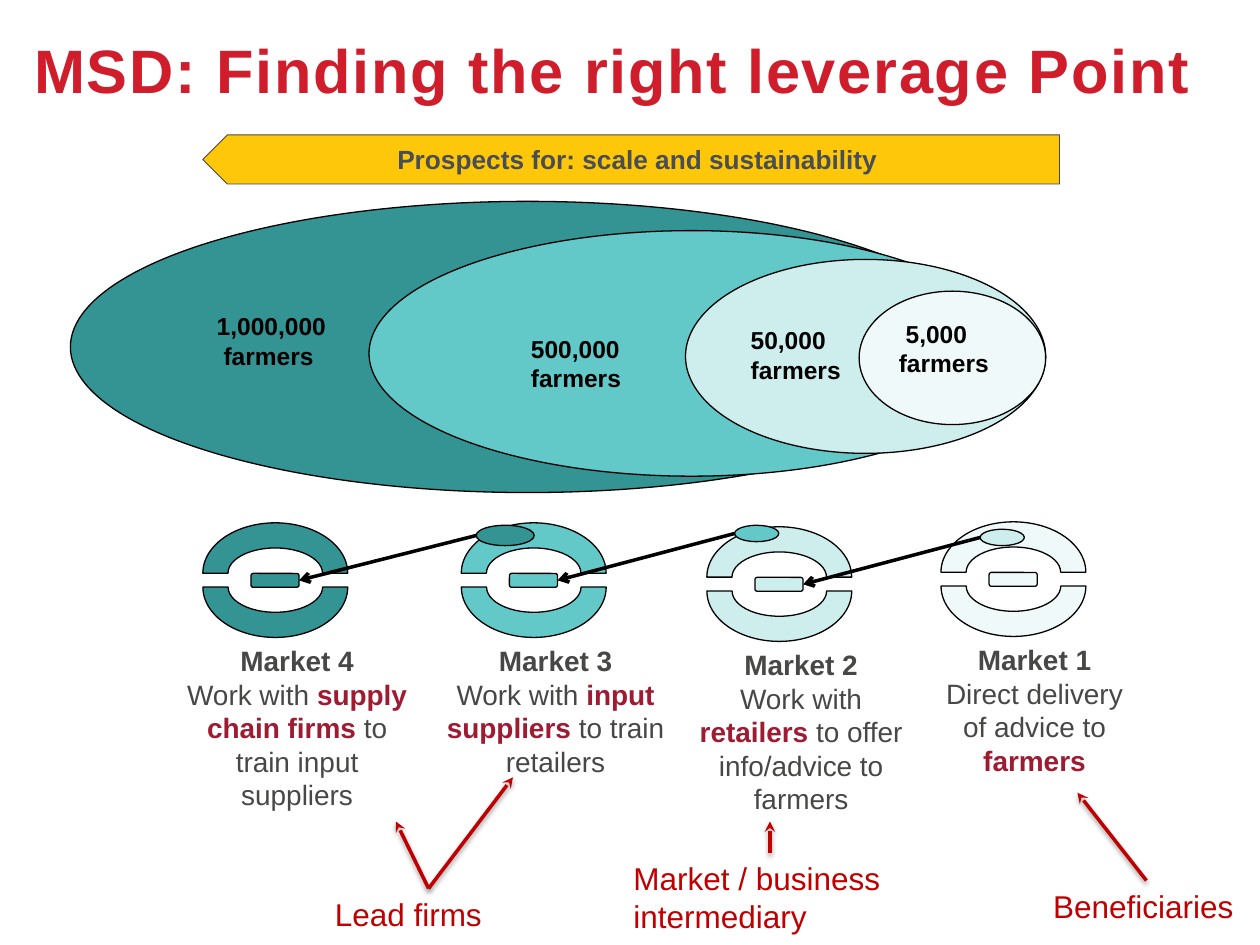
from lxml.etree import SubElement
from pptx import Presentation
from pptx.dml.color import RGBColor
from pptx.enum.shapes import MSO_CONNECTOR, MSO_SHAPE
from pptx.enum.text import MSO_ANCHOR, PP_ALIGN
from pptx.oxml import parse_xml
from pptx.oxml.ns import nsdecls, qn
from pptx.util import Cm, Pt

BLACK = RGBColor(0x00, 0x00, 0x00)
TEAL = RGBColor(0x34, 0x93, 0x93)
AQUA = RGBColor(0x63, 0xC8, 0xC8)
PALE = RGBColor(0xCE, 0xEE, 0xEE)
ICE = RGBColor(0xEF, 0xF9, 0xF9)
YELLOW = RGBColor(0xFE, 0xC7, 0x09)
BANNER_LINE = RGBColor(0x47, 0x47, 0x47)
BANNER_TEXT = RGBColor(0x49, 0x4E, 0x55)
GREY = RGBColor(0x47, 0x47, 0x46)
WINE = RGBColor(0x9E, 0x1B, 0x32)
TITLE_RED = RGBColor(0xD0, 0x1D, 0x2B)
CALLOUT_RED = RGBColor(0xC0, 0x00, 0x00)

SOFT_SHADOW = (
    f'<a:effectLst {nsdecls("a")}>'
    '<a:outerShdw blurRad="39400" dist="20300" dir="5400000" rotWithShape="0">'
    '<a:srgbClr val="000000"><a:alpha val="38000"/></a:srgbClr>'
    '</a:outerShdw></a:effectLst>'
)
NO_SHADOW = f'<a:effectLst {nsdecls("a")}/>'


def add_run(paragraph, text, size, color, bold=False):
    run = paragraph.add_run()
    run.text = text
    run.font.name = "Arial"
    run.font.size = Pt(size)
    run.font.bold = bold
    run.font.color.rgb = color
    return run


def add_figure(slide, kind, left, top, width, height, fill, line=BLACK, weight=0.75):
    shape = slide.shapes.add_shape(kind, Cm(left), Cm(top), Cm(width), Cm(height))
    shape.shadow.inherit = False
    shape.fill.solid()
    shape.fill.fore_color.rgb = fill
    shape.line.color.rgb = line
    shape.line.width = Pt(weight)
    return shape


def add_text_box(slide, left, top, width, height):
    box = slide.shapes.add_textbox(Cm(left), Cm(top), Cm(width), Cm(height))
    box.text_frame.word_wrap = True
    return box.text_frame


def add_arrow(slide, start, end, color, head, effect):
    points = [Cm(value) for value in (*start, *end)]
    arrow = slide.shapes.add_connector(MSO_CONNECTOR.STRAIGHT, *points)
    arrow.line.color.rgb = color
    arrow.line.width = Pt(2)
    SubElement(arrow.line._get_or_add_ln(), qn("a:tailEnd"), type=head)
    arrow._element.spPr.append(parse_xml(effect))
    return arrow


def add_title(slide):
    frame = add_text_box(slide, 0.69, 0.97, 24.71, 1.14)
    frame.margin_left = frame.margin_right = frame.margin_top = frame.margin_bottom = 0
    frame.vertical_anchor = MSO_ANCHOR.MIDDLE
    paragraph = frame.paragraphs[0]
    paragraph.line_spacing = 0.8
    run = add_run(paragraph, "MSD: Finding the right leverage Point", 35, TITLE_RED, True)
    run.font._element.set("spc", "100")


def add_banner(slide):
    banner = add_figure(slide, MSO_SHAPE.PENTAGON, 4.09, 2.72, 17.27, 0.99,
                        YELLOW, BANNER_LINE, 0.5)
    banner._element.spPr.get_or_add_xfrm().set("flipH", "1")
    frame = banner.text_frame
    frame.vertical_anchor = MSO_ANCHOR.MIDDLE
    paragraph = frame.paragraphs[0]
    paragraph.alignment = PP_ALIGN.CENTER
    add_run(paragraph, "Prospects for: scale and sustainability", 15, BANNER_TEXT, True)


def add_reach(slide, bounds, fill, lines, indent, drop):
    """Ellipse for the number of farmers reached."""
    frame = add_figure(slide, MSO_SHAPE.OVAL, *bounds, fill).text_frame
    frame.word_wrap = True
    frame.vertical_anchor = MSO_ANCHOR.TOP
    frame.margin_left, frame.margin_top = Cm(indent), Cm(drop)
    for index, line in enumerate(lines):
        paragraph = frame.add_paragraph() if index else frame.paragraphs[0]
        paragraph.alignment = PP_ALIGN.LEFT
        add_run(paragraph, line, 14, BLACK, True)


def add_market(slide, name, left, top, fill, pieces, text_shift, text_width):
    """Split ring with a centre bar and a caption; returns the bar."""
    add_figure(slide, MSO_SHAPE.BLOCK_ARC, left, top, 2.92, 2.03, fill)
    lower = add_figure(slide, MSO_SHAPE.BLOCK_ARC, left, top + 0.28, 2.92, 2.03, fill)
    lower.rotation = 180
    bar = add_figure(slide, MSO_SHAPE.ROUNDED_RECTANGLE, left + 0.97, top + 1.02,
                     0.97, 0.28, fill)

    frame = add_text_box(slide, left + text_shift, top + 2.31, text_width, 4.37)
    heading, body = frame.paragraphs[0], frame.add_paragraph()
    heading.alignment = body.alignment = PP_ALIGN.CENTER
    add_run(heading, name, 16, GREY, True)
    for text, key in pieces:
        add_run(body, text, 16, WINE if key else GREY, key)
    return bar


def add_lever(slide, bar, left, top, width, height, fill):
    """Small oval in the next market, with an arrow back to the bar."""
    add_figure(slide, MSO_SHAPE.OVAL, left, top, width, height, fill)
    start = (left, top + height / 2)
    arrow = add_arrow(slide, start, start, BLACK, "arrow", NO_SHADOW)
    arrow.end_connect(bar, 3)


def add_callout(slide, text, left, top, width, height, start, targets):
    paragraph = add_text_box(slide, left, top, width, height).paragraphs[0]
    add_run(paragraph, text, 18, CALLOUT_RED)
    for target in targets:
        add_arrow(slide, start, target, CALLOUT_RED, "stealth", SOFT_SHADOW)


def main():
    presentation = Presentation()
    presentation.slide_width, presentation.slide_height = Cm(25.4), Cm(19.05)
    slide = presentation.slides.add_slide(presentation.slide_layouts[6])

    # Markets, from right to left, each with its lever in the market before it
    markets = [
        ("Market 1", 18.97, 10.52, ICE,
         [("Direct delivery of advice to ", False), ("farmers", True)],
         -0.25, 4.27, None),
        ("Market 2", 14.25, 10.62, PALE,
         [("Work with ", False), ("retailers", True),
          (" to offer info/advice to farmers", False)],
         -0.74, 5.28, (19.76, 10.67, 0.89, 0.33)),
        ("Market 3", 9.3, 10.54, AQUA,
         [("Work with ", False), ("input suppliers ", True),
          ("to train retailers", False)],
         -0.74, 5.28, (14.81, 10.59, 0.89, 0.33)),
        ("Market 4", 4.09, 10.54, TEAL,
         [("Work with ", False), ("supply chain firms ", True),
          ("to train input suppliers", False)],
         -0.74, 5.28, (9.6, 10.59, 1.17, 0.41)),
    ]
    for name, left, top, fill, pieces, shift, width, lever in markets:
        bar = add_market(slide, name, left, top, fill, pieces, shift, width)
        if lever:
            add_lever(slide, bar, *lever, fill)

    # Nested ellipses of farmers reached
    add_reach(slide, (1.42, 4.06, 18.44, 5.87), TEAL, ["1,000,000", " farmers"], 0.25, 1.36)
    add_reach(slide, (7.44, 4.65, 13, 4.95), AQUA, ["500,000", "farmers"], 1.36, 1.36)
    add_reach(slide, (13.82, 5.23, 7.26, 3.91), PALE, ["50,000", "farmers"], 0.25, 0.76)
    add_reach(slide, (17.32, 5.87, 3.76, 2.69), ICE, [" 5,000 farmers"], 0.25, 0.17)

    # Heading
    add_banner(slide)
    add_title(slide)

    # Callouts under the markets
    add_callout(slide, "Beneficiaries", 20.98, 17.75, 4.27, 1.02,
                (23.11, 17.75), [(21.72, 15.98)])
    add_callout(slide, "Market / business intermediary", 12.52, 17.2, 6.02, 1.8,
                (15.52, 17.2), [(15.52, 16.56)])
    add_callout(slide, "Lead firms", 6.5, 17.91, 4.27, 1.02,
                (8.64, 17.91), [(10.34, 15.67), (7.98, 16.56)])

    presentation.save("out.pptx")


if __name__ == "__main__":
    main()
